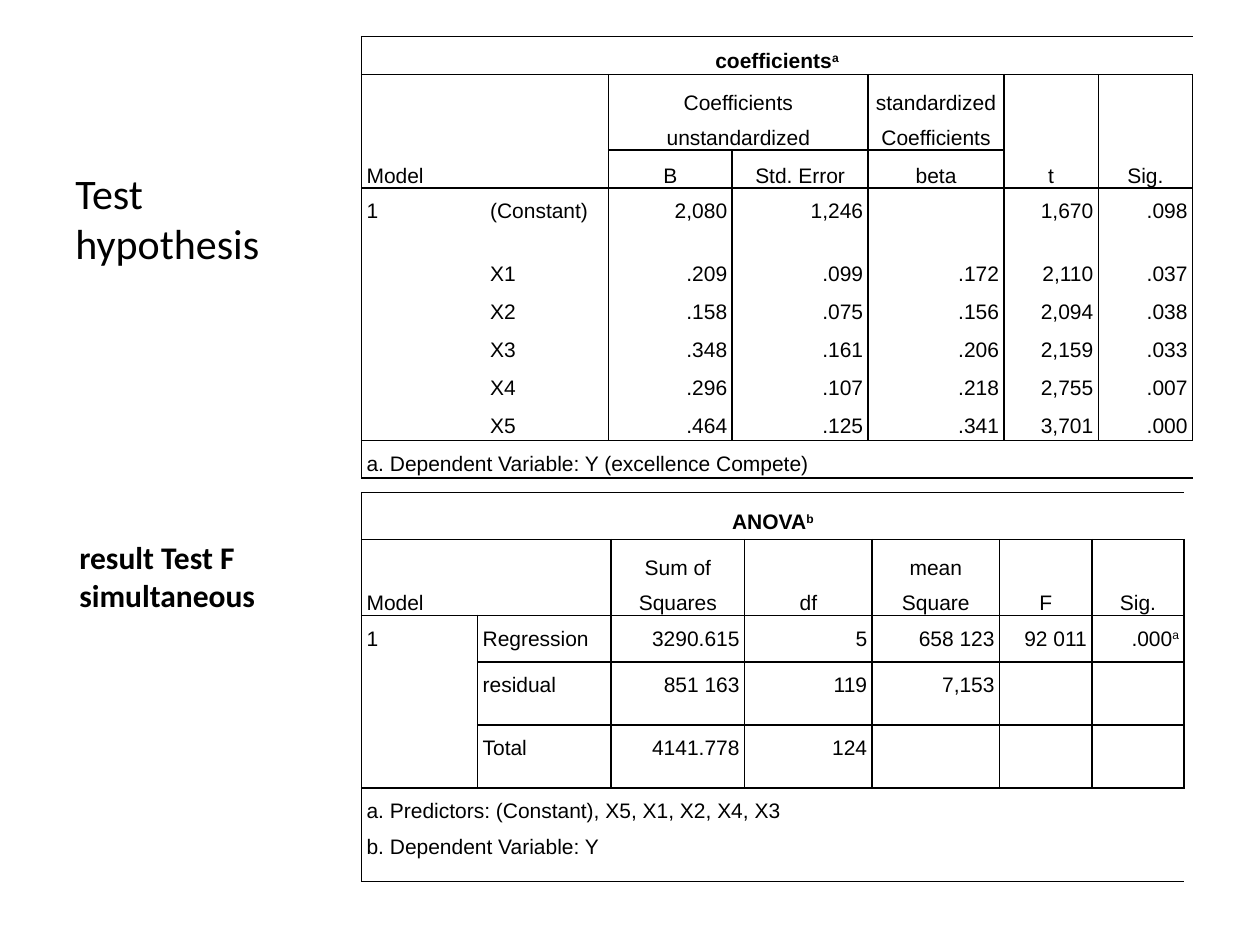
from pptx import Presentation
from pptx.dml.color import RGBColor
from pptx.enum.text import MSO_ANCHOR, PP_ALIGN
from pptx.oxml.ns import qn
from pptx.util import Cm, Pt
from lxml.etree import SubElement

COLORS = {"ink": "000000", "paper": "FFFFFF"}
LEFT, CENTER, RIGHT = PP_ALIGN.LEFT, PP_ALIGN.CENTER, PP_ALIGN.RIGHT
HEADER = {"align": CENTER, "anchor": MSO_ANCHOR.BOTTOM}
MODEL = {"align": LEFT, "anchor": MSO_ANCHOR.BOTTOM}
TITLE = {"align": CENTER, "anchor": MSO_ANCHOR.MIDDLE, "bold": True}


def rgb(name):
    return RGBColor.from_string(COLORS[name])


def write(frame, text, font="Calibri", size=12, bold=False, align=None, spacing=None, margin=None):
    """Fill a frame; a newline starts a paragraph, ^ starts a superscript."""
    for i, line in enumerate(text.split("\n")):
        paragraph = frame.paragraphs[0] if i == 0 else frame.add_paragraph()
        paragraph.alignment = align
        paragraph.line_spacing = spacing
        if margin is not None:
            properties = paragraph._p.get_or_add_pPr()
            properties.set("marL", str(margin))
            properties.set("marR", str(margin))
            properties.set("indent", "0")
        for j, part in enumerate(line.split("^")):
            run = paragraph.add_run()
            run.text = part
            run.font.name, run.font.size, run.font.bold = font, Pt(size), bold
            run.font.color.rgb = rgb("ink")
            if j:
                run.font._element.set("baseline", "30000")


class SlideBuilder:
    def __init__(self, slide):
        self.slide = slide
        self.table_font = "Arial"
        self.cell_margin = Cm(0.1)
        self.border = Pt(1)

    def label(self, left, top, width, height, text, **style):
        frame = self.slide.shapes.add_textbox(Cm(left), Cm(top), Cm(width), Cm(height)).text_frame
        frame.word_wrap = True
        write(frame, text, **style)

    def borders(self, cell, sides):
        properties = cell._tc.get_or_add_tcPr()
        for place, side in enumerate("LRTB"):
            line = SubElement(properties, qn(f"a:ln{side}"), w=str(self.border))
            properties.remove(line)
            properties.insert(place, line)
            if side in sides:
                fill = SubElement(line, qn("a:solidFill"))
                SubElement(fill, qn("a:srgbClr"), val=COLORS["ink"])
            else:
                SubElement(line, qn("a:noFill"))

    def block(self, grid, row, col, text, height=1, width=1, sides="LRTB",
              align=RIGHT, anchor=MSO_ANCHOR.TOP, bold=False):
        """One cell, or a merged area whose border runs round the outside."""
        for r in range(height):
            for c in range(width):
                cell = grid.cell(row + r, col + c)
                cell.fill.solid()
                cell.fill.fore_color.rgb = rgb("paper")
                outer = {"L": c == 0, "R": c == width - 1, "T": r == 0, "B": r == height - 1}
                self.borders(cell, [side for side in sides if outer[side]])
        first = grid.cell(row, col)
        if height * width > 1:
            first.merge(grid.cell(row + height - 1, col + width - 1))
        first.margin_left = first.margin_right = first.margin_top = first.margin_bottom = 0
        first.vertical_anchor = anchor
        if text:
            write(first.text_frame, text, font=self.table_font, bold=bold, align=align,
                  spacing=1.5, margin=self.cell_margin)

    def table(self, left, top, columns, rows):
        grid = self.slide.shapes.add_table(
            len(rows), len(columns), Cm(left), Cm(top), Cm(sum(columns)), Cm(sum(rows))).table
        grid.first_row = grid.horz_banding = False
        for column, width in zip(grid.columns, columns):
            column.width = Cm(width)
        for row, height in zip(grid.rows, rows):
            row.height = Cm(height)
        return grid


def coefficients_table(builder):
    grid = builder.table(7.29, 0.74, [2.49] * 3 + [2.74] * 2 + [1.9] * 2,
                         [0.76, 1.52, 0.76, 1.27] + [0.76] * 6)
    # Headings
    builder.block(grid, 0, 0, "coefficients^a", width=7, **TITLE)
    builder.block(grid, 1, 0, "Model", height=2, width=2, **MODEL)
    builder.block(grid, 1, 2, "Coefficients unstandardized", width=2, **HEADER)
    builder.block(grid, 1, 4, "standardized Coefficients", **HEADER)
    for col, heading in enumerate(["t", "Sig."], 5):
        builder.block(grid, 1, col, heading, height=2, **HEADER)
    for col, heading in enumerate(["B", "Std. Error", "beta"], 2):
        builder.block(grid, 2, col, heading, **HEADER)
    # Body: upright lines only, closed at the top and the bottom
    body = [
        ["(Constant)", "2,080", "1,246", "", "1,670", ".098"],
        ["X1", ".209", ".099", ".172", "2,110", ".037"],
        ["X2", ".158", ".075", ".156", "2,094", ".038"],
        ["X3", ".348", ".161", ".206", "2,159", ".033"],
        ["X4", ".296", ".107", ".218", "2,755", ".007"],
        ["X5", ".464", ".125", ".341", "3,701", ".000"],
    ]
    builder.block(grid, 3, 0, "1", height=len(body), sides="LTB", align=LEFT)
    for r, values in enumerate(body):
        ends = ("T" if r == 0 else "") + ("B" if r == len(body) - 1 else "")
        for col, value in enumerate(values, 1):
            is_name = col == 1
            builder.block(grid, 3 + r, col, value, sides=("R" if is_name else "LR") + ends,
                          align=LEFT if is_name else RIGHT)
    # Footnote
    builder.block(grid, 9, 0, "a. Dependent Variable: Y (excellence Compete)", width=7, align=LEFT)


def anova_table(builder):
    grid = builder.table(7.29, 9.93, [2.34] + [2.69] * 2 + [2.57] * 2 + [1.86] * 2,
                         [0.95, 1.51, 0.94, 1.27, 1.27, 1.88])
    # Headings
    builder.block(grid, 0, 0, "ANOVA^b", width=7, **TITLE)
    builder.block(grid, 1, 0, "Model", width=2, **MODEL)
    for col, heading in enumerate(["Sum of Squares", "df", "mean Square", "F", "Sig."], 2):
        builder.block(grid, 1, col, heading, **HEADER)
    # Body
    body = [
        ["Regression", "3290.615", "5", "658 123", "92 011", ".000^a"],
        ["residual", "851 163", "119", "7,153", "", ""],
        ["Total", "4141.778", "124", "", "", ""],
    ]
    builder.block(grid, 2, 0, "1", height=len(body), align=LEFT)
    for row, values in enumerate(body, 2):
        for col, value in enumerate(values, 1):
            builder.block(grid, row, col, value, align=LEFT if col == 1 else RIGHT)
    # Footnotes
    builder.block(grid, 5, 0, "a. Predictors: (Constant), X5, X1, X2, X4, X3\nb. Dependent Variable: Y",
                  width=7, align=LEFT)


def main():
    deck = Presentation()
    deck.slide_width, deck.slide_height = Cm(25.4), Cm(19.05)
    builder = SlideBuilder(deck.slides.add_slide(deck.slide_layouts[6]))
    builder.label(1.27, 3.25, 4.85, 1.27, "Test hypothesis", size=24)
    coefficients_table(builder)
    builder.label(1.35, 10.72, 5.64, 1.02, "result Test F simultaneous", size=18, bold=True)
    anova_table(builder)
    deck.save("out.pptx")


if __name__ == "__main__":
    main()
